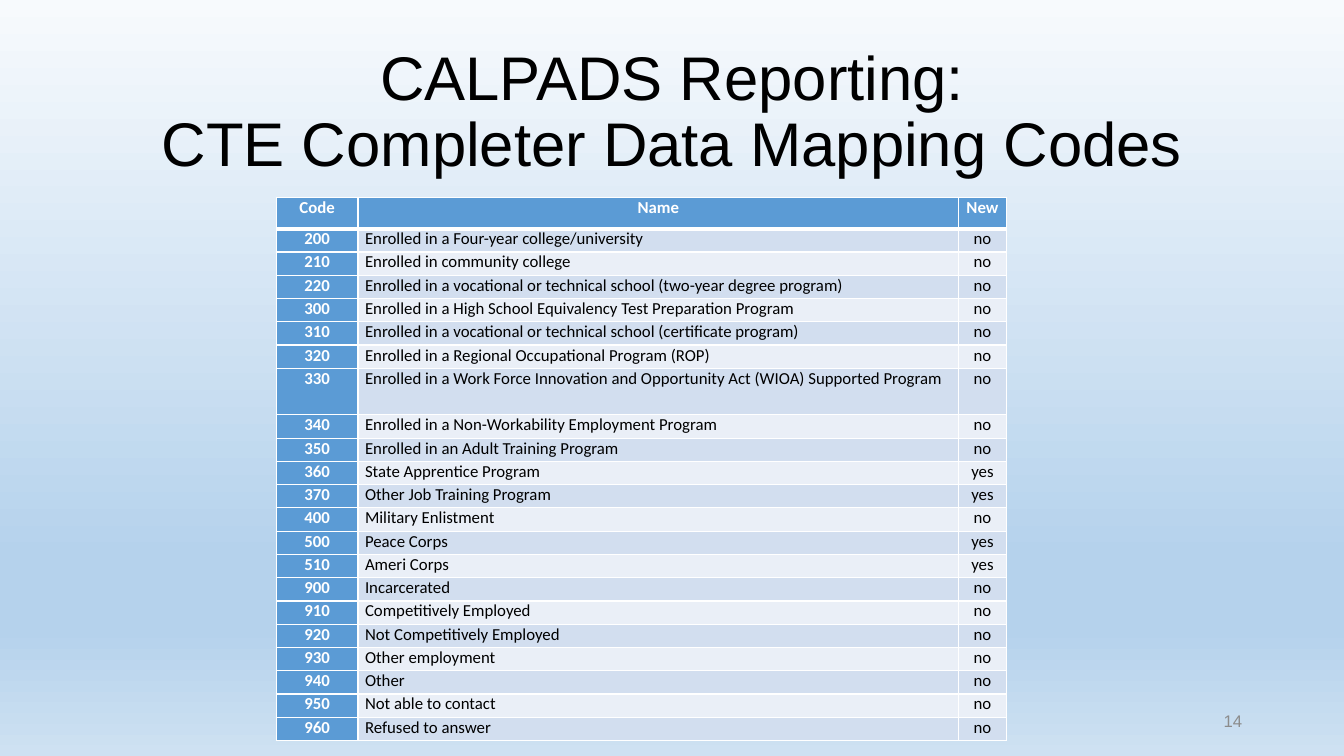
import pptx
import pptx.dml.color
import pptx.enum.text
import pptx.oxml
import pptx.oxml.ns
import pptx.util

SLIDE_WIDTH, SLIDE_HEIGHT = 13.33, 7.5
BACKGROUND_STOPS = [(0, "F7FAFD"), (74, "B5D2EC"), (83, "B5D2EC"), (100, "CEE1F2")]
TITLE_BOX = (0.92, 0.4, 11.5, 1.45)
CODES_BOX = (2.74, 1.96, 7.24, 5.39)
NUMBER_BOX = (9.42, 6.95, 3, 0.4)
COLUMN_SHARES = [0.112, 0.823, 0.065]
HEADER_SHARE = 0.0575
TALL_CODE = "330"
HEADINGS = ("Code", "Name", "New")
CODES = [
    ("200", "Enrolled in a Four-year college/university", "no"),
    ("210", "Enrolled in community college", "no"),
    ("220", "Enrolled in a vocational or technical school (two-year degree program)", "no"),
    ("300", "Enrolled in a High School Equivalency Test Preparation Program", "no"),
    ("310", "Enrolled in a vocational or technical school (certificate program)", "no"),
    ("320", "Enrolled in a Regional Occupational Program (ROP)", "no"),
    ("330", "Enrolled in a Work Force Innovation and Opportunity Act (WIOA) Supported Program", "no"),
    ("340", "Enrolled in a Non-Workability Employment Program", "no"),
    ("350", "Enrolled in an Adult Training Program", "no"),
    ("360", "State Apprentice Program", "yes"),
    ("370", "Other Job Training Program", "yes"),
    ("400", "Military Enlistment", "no"),
    ("500", "Peace Corps", "yes"),
    ("510", "Ameri Corps", "yes"),
    ("900", "Incarcerated", "no"),
    ("910", "Competitively Employed", "no"),
    ("920", "Not Competitively Employed", "no"),
    ("930", "Other employment", "no"),
    ("940", "Other", "no"),
    ("950", "Not able to contact", "no"),
    ("960", "Refused to answer", "no"),
]
ALIGN = pptx.enum.text.PP_ALIGN
MIDDLE = pptx.enum.text.MSO_ANCHOR.MIDDLE
NO_FIT = pptx.enum.text.MSO_AUTO_SIZE.NONE


def color(hex_value):
    return pptx.dml.color.RGBColor.from_string(hex_value)


def inches(box):
    return [pptx.util.Inches(length) for length in box]


def apply(target, formats):
    for attribute, value in formats.items():
        setattr(target, attribute, value)


def style_font(font, name, size, hex_value, bold=False):
    apply(font, {"name": name, "size": pptx.util.Pt(size), "bold": bold})
    font.color.rgb = color(hex_value)


def paint_background(slide):
    fill = slide.background.fill
    fill.gradient()
    fill.gradient_angle = 270
    stops = slide.background._cSld.find(".//" + pptx.oxml.ns.qn("a:gsLst"))
    stops.clear()
    for position, hex_value in BACKGROUND_STOPS:
        stops.append(pptx.oxml.parse_xml(
            f'<a:gs {pptx.oxml.ns.nsdecls("a")} pos="{position * 1000}">'
            f'<a:srgbClr val="{hex_value}"/></a:gs>'))


def place_title(slide, box):
    title = slide.shapes.title
    apply(title, dict(zip(("left", "top", "width", "height"), inches(box))))
    apply(title.text_frame, {"word_wrap": True, "auto_size": NO_FIT, "vertical_anchor": MIDDLE})
    heading = title.text_frame.paragraphs[0]
    apply(heading, {"alignment": ALIGN.CENTER, "line_spacing": 0.9})
    heading.add_run().text = "CALPADS Reporting:"
    heading.add_line_break()
    heading.add_run().text = "CTE Completer Data Mapping Codes"
    for run in heading.runs:
        style_font(run.font, "Arial", 44, "000000")


def border_cell(cell, widths):
    properties = cell._tc.get_or_add_tcPr()
    for side, width in widths.items():
        properties.append(pptx.oxml.parse_xml(
            f'<a:ln{side} {pptx.oxml.ns.nsdecls("a")} w="{pptx.util.Pt(width)}">'
            f'<a:solidFill><a:srgbClr val="FFFFFF"/></a:solidFill></a:ln{side}>'))


def fill_cell(cell, text, row, column):
    is_label = row == 0 or column == 0
    border_cell(cell, {"L": 1, "R": 1, "T": 3 if row == 1 else 1, "B": 3 if row == 0 else 1})
    band = "D2DEEF" if row % 2 else "EAEFF7"
    cell.fill.solid()
    cell.fill.fore_color.rgb = color("5B9BD5" if is_label else band)
    side = pptx.util.Inches(0.07)
    apply(cell, {"margin_left": side, "margin_right": side, "margin_top": 0, "margin_bottom": 0})
    entry = cell.text_frame.paragraphs[0]
    gap = pptx.util.Pt(6)
    alignment = ALIGN.LEFT if column == 1 and row else ALIGN.CENTER
    apply(entry, {"alignment": alignment, "space_before": gap, "space_after": gap})
    run = entry.add_run()
    run.text = text
    style_font(run.font, "Calibri", 12, "FFFFFF" if is_label else "000000", is_label)


def place_codes(slide, box):
    entries = [HEADINGS] + CODES
    left, top, width, height = inches(box)
    codes = slide.shapes.add_table(len(entries), len(HEADINGS), left, top, width, height).table
    for column, share in zip(codes.columns, COLUMN_SHARES):
        column.width = int(width * share)
    header_height = int(height * HEADER_SHARE)
    line_height = (height - header_height) // (len(CODES) + 1)
    for row, entry in enumerate(entries):
        lines = 2 if entry[0] == TALL_CODE else 1
        codes.rows[row].height = line_height * lines if row else header_height
        for column, text in enumerate(entry):
            fill_cell(codes.cell(row, column), text, row, column)


def place_number(slide, box):
    frame = slide.shapes.add_textbox(*inches(box)).text_frame
    apply(frame, {"word_wrap": True, "vertical_anchor": MIDDLE})
    frame.paragraphs[0].alignment = ALIGN.RIGHT
    run = frame.paragraphs[0].add_run()
    run.text = "14"
    style_font(run.font, "Arial", 12, "8C8C8C")


def main():
    deck = pptx.Presentation()
    deck.slide_width, deck.slide_height = inches((SLIDE_WIDTH, SLIDE_HEIGHT))
    slide = deck.slides.add_slide(deck.slide_layouts[5])
    paint_background(slide)
    place_title(slide, TITLE_BOX)
    place_codes(slide, CODES_BOX)
    place_number(slide, NUMBER_BOX)
    deck.save("out.pptx")


if __name__ == "__main__":
    main()
